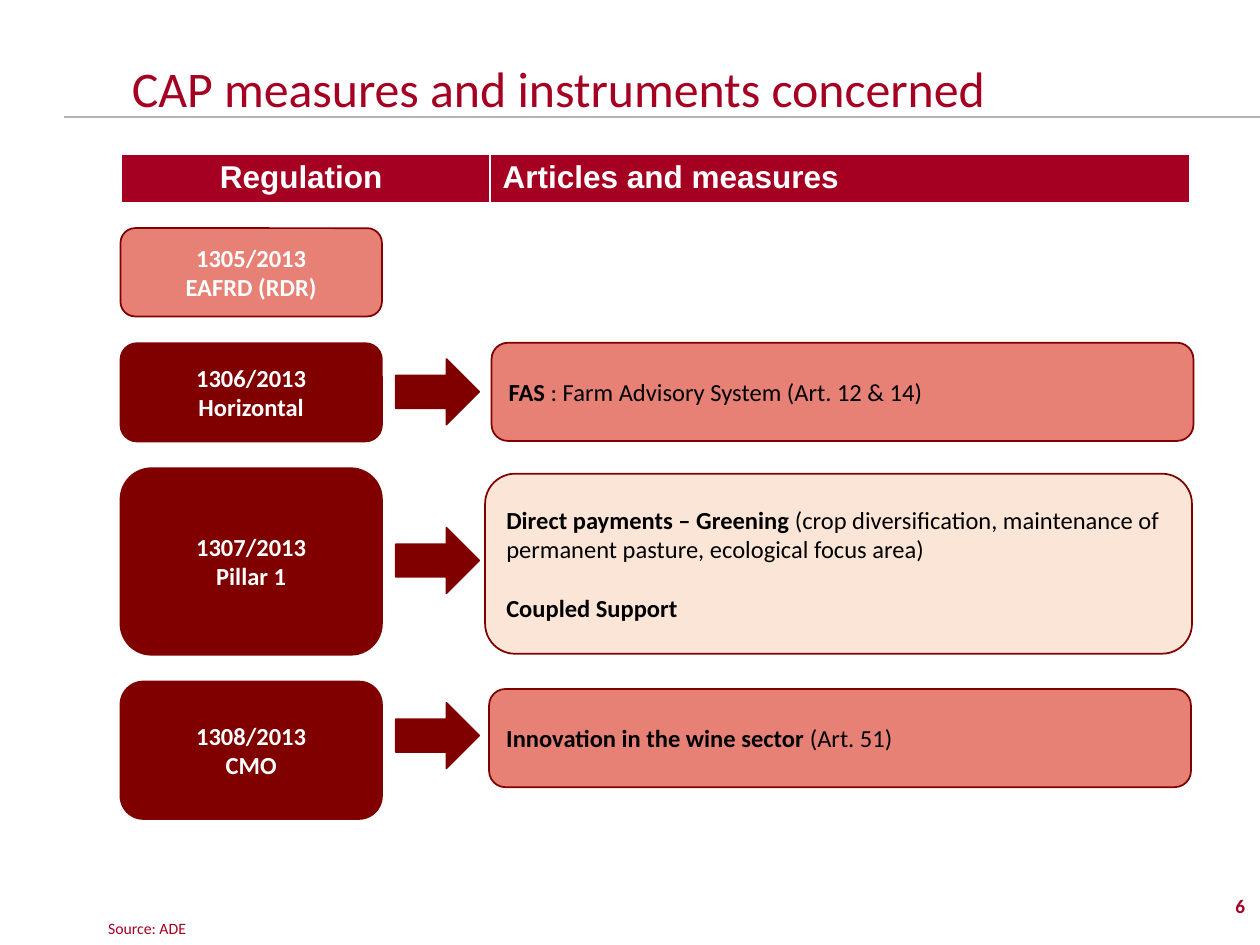
from lxml.etree import SubElement
from pptx import Presentation
from pptx.dml.color import RGBColor
from pptx.enum.shapes import MSO_CONNECTOR, MSO_SHAPE
from pptx.enum.text import MSO_ANCHOR, PP_ALIGN
from pptx.oxml.ns import qn
from pptx.util import Cm, Pt

# Content: a paragraph is a list of (text, bold) runs
TITLE = "CAP measures and instruments concerned"
SOURCE = "Source: ADE"
PAGE_NUMBER = "6"
HEADINGS = [("Regulation ", 7.44, PP_ALIGN.CENTER),
            ("Articles and measures", 14.1, PP_ALIGN.LEFT)]

# Heights and positions in cm; detail box is (left, top, width, height)
REGULATIONS = [
    dict(names=("1305/2013", "EAFRD (RDR)"), height=1.78, fill="salmon"),
    dict(names=("1306/2013", "Horizontal"), height=1.98, fill="maroon",
         arrow_top=7.24, detail_box=(9.91, 6.91, 14.15, 1.98), detail_fill="salmon",
         detail=[[("FAS ", True), (": Farm Advisory System (Art. 12 & 14)", False)]]),
    dict(names=("1307/2013", "Pillar 1"), height=3.76, fill="maroon",
         arrow_top=10.64, detail_box=(9.78, 9.55, 14.25, 3.63), detail_fill="cream",
         detail=[[("Direct payments – Greening ", True),
                  ("(crop diversification, maintenance of permanent pasture, "
                   "ecological focus area)", False)],
                 [("Coupled Support", True)]]),
    dict(names=("1308/2013", "CMO"), height=2.77, fill="maroon",
         arrow_top=14.17, detail_box=(9.86, 13.89, 14.15, 1.98), detail_fill="salmon",
         detail=[[("Innovation in the wine sector", True), (" (Art. 51)", False)]]),
]
REGULATION_LEFT, REGULATION_WIDTH = 2.43, 5.27
FIRST_TOP, GAP = 4.6, 0.54
ARROW_LEFT, ARROW_WIDTH, ARROW_HEIGHT = 7.98, 1.68, 1.32

THEME = {
    "color": {name: RGBColor.from_string(code) for name, code in dict(
        crimson="A50021", maroon="800000", salmon="E78075", cream="FBE5D6",
        grey="B4B4B4", white="FFFFFF", black="000000").items()},
    "size": dict(title=28.5, heading=18, body=14, number=11, source=9),
}
COLOR, SIZE = THEME["color"], THEME["size"]


def write(frame, paragraphs, size="body", color="black", font="Calibri",
          align=PP_ALIGN.LEFT, anchor=MSO_ANCHOR.MIDDLE, spacing=None, gap=0):
    frame.word_wrap = True
    frame.vertical_anchor = anchor
    for index, runs in enumerate(paragraphs):
        paragraph = frame.add_paragraph() if index else frame.paragraphs[0]
        paragraph.alignment = align
        if spacing:
            paragraph.line_spacing = spacing
        if index and gap:
            paragraph.space_before = Pt(gap)
        for text, bold in runs:
            run = paragraph.add_run()
            run.text = text
            run.font.name = font
            run.font.size = Pt(SIZE[size])
            run.font.bold = bold
            run.font.color.rgb = COLOR[color]


def add_block(slide, kind, box, fill):
    block = slide.shapes.add_shape(kind, *map(Cm, box))
    block.shadow.inherit = False
    block.fill.solid()
    block.fill.fore_color.rgb = COLOR[fill]
    block.line.color.rgb = COLOR["maroon"]
    block.line.width = Pt(1)
    return block


def add_label(slide, box, text, bold=False, **style):
    label = slide.shapes.add_textbox(*map(Cm, box))
    write(label.text_frame, [[(text, bold)]], color="crimson",
          anchor=MSO_ANCHOR.BOTTOM, **style)


def add_border(cell, side, width):
    border = SubElement(cell._tc.get_or_add_tcPr(), qn(f"a:{side}"), w=str(Pt(width)))
    fill = SubElement(border, qn("a:solidFill"))
    SubElement(fill, qn("a:srgbClr"), val=str(COLOR["white"]))


def add_headings(slide):
    width = sum(heading[1] for heading in HEADINGS)
    table = slide.shapes.add_table(1, len(HEADINGS), Cm(2.44), Cm(3.1),
                                   Cm(width), Cm(0.95)).table
    for index, (text, column_width, align) in enumerate(HEADINGS):
        table.columns[index].width = Cm(column_width)
        cell = table.cell(0, index)
        for side, weight in (("lnL", 1), ("lnR", 1), ("lnT", 1), ("lnB", 3)):
            add_border(cell, side, weight)
        cell.fill.solid()
        cell.fill.fore_color.rgb = COLOR["crimson"]
        write(cell.text_frame, [[(text, True)]], size="heading", color="white",
              font="Arial", align=align, anchor=MSO_ANCHOR.TOP)


def add_regulations(slide):
    top = FIRST_TOP
    for regulation in REGULATIONS:
        box = (REGULATION_LEFT, top, REGULATION_WIDTH, regulation["height"])
        block = add_block(slide, MSO_SHAPE.ROUNDED_RECTANGLE, box, regulation["fill"])
        write(block.text_frame, [[(name, True)] for name in regulation["names"]],
              color="white", align=PP_ALIGN.CENTER)
        top += regulation["height"] + GAP
        if "detail" in regulation:
            add_block(slide, MSO_SHAPE.RIGHT_ARROW,
                      (ARROW_LEFT, regulation["arrow_top"], ARROW_WIDTH, ARROW_HEIGHT),
                      "maroon")
            detail = add_block(slide, MSO_SHAPE.ROUNDED_RECTANGLE,
                               regulation["detail_box"], regulation["detail_fill"])
            write(detail.text_frame, regulation["detail"], gap=17)


def main():
    deck = Presentation()
    deck.slide_width, deck.slide_height = Cm(25.4), Cm(19.05)
    slide = deck.slides.add_slide(deck.slide_layouts[6])

    # Title and rule
    rule = slide.shapes.add_connector(MSO_CONNECTOR.STRAIGHT, Cm(1.3), Cm(2.36),
                                      Cm(25.4), Cm(2.36))
    rule.line.color.rgb = COLOR["grey"]
    rule.line.width = Pt(1.5)
    SubElement(rule._element.spPr, qn("a:effectLst"))
    add_label(slide, (2.41, 0, 22.99, 2.51), TITLE, size="title", spacing=0.9)

    # Headings, regulations and their measures
    add_headings(slide)
    add_regulations(slide)

    # Footer
    add_label(slide, (1.93, 18.01, 11.96, 1.02), SOURCE, size="source")
    add_label(slide, (19.89, 17.6, 5.46, 1.02), PAGE_NUMBER, bold=True,
              size="number", align=PP_ALIGN.RIGHT)
    deck.save("out.pptx")


if __name__ == "__main__":
    main()
